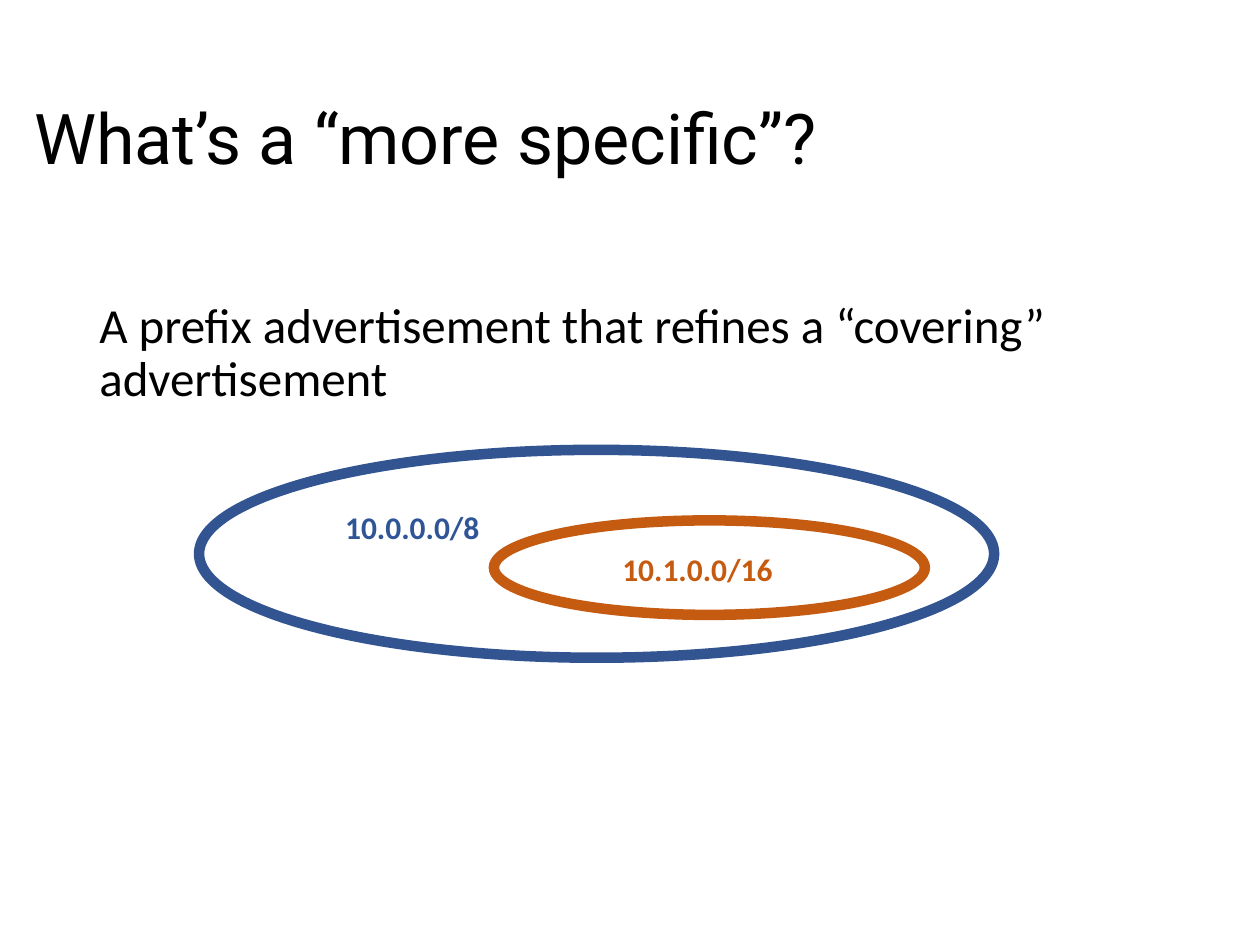
from pptx import Presentation
from pptx.dml.color import RGBColor
from pptx.enum import shapes, text
from pptx.util import Inches, Pt

COLORS = {
    "text": "000000",
    "background": "FFFFFF",
    "covering_line": "325491",
    "covering_label": "2F5597",
    "specific": "C55A11",
}


def color(name):
    return RGBColor.from_string(COLORS[name])


def inches(box):
    return [Inches(length) for length in box]


def write(paragraph, wording, font_name, size, color_name, bold=False):
    paragraph.text = wording
    paragraph.alignment = text.PP_ALIGN.LEFT
    font = paragraph.font
    font.name = font_name
    font.size = Pt(size)
    font.bold = bold
    font.color.rgb = color(color_name)


def place_title(slide, box, wording):
    title = slide.shapes.title
    title.left, title.top, title.width, title.height = inches(box)
    frame = title.text_frame
    frame.vertical_anchor = text.MSO_ANCHOR.MIDDLE
    paragraph = frame.paragraphs[0]
    write(paragraph, wording, "Roboto", 40, "text")
    paragraph.line_spacing = 0.9


def add_definition(slide, box, wording):
    frame = slide.shapes.add_textbox(*inches(box)).text_frame
    frame.word_wrap = True
    paragraph = frame.paragraphs[0]
    write(paragraph, wording, "Calibri", 28, "text")
    paragraph.line_spacing = 0.9
    paragraph.space_before = Pt(10)


def add_prefix(slide, box, line_color, label_box, label, label_color):
    ellipse = slide.shapes.add_shape(shapes.MSO_SHAPE.OVAL, *inches(box))
    ellipse.shadow.inherit = False
    ellipse.fill.solid()
    ellipse.fill.fore_color.rgb = color("background")
    ellipse.line.color.rgb = color(line_color)
    ellipse.line.width = Pt(6)

    left, top, width, height = box
    dx, dy, label_width, label_height = label_box
    frame = slide.shapes.add_textbox(
        *inches((left + dx, top + dy, label_width, label_height))
    ).text_frame
    frame.word_wrap = False
    frame.auto_size = text.MSO_AUTO_SIZE.SHAPE_TO_FIT_TEXT
    write(frame.paragraphs[0], label, "Calibri", 18, label_color, bold=True)


def main():
    presentation = Presentation()
    presentation.slide_width = Inches(10)
    presentation.slide_height = Inches(7.5)
    slide = presentation.slides.add_slide(presentation.slide_layouts[5])

    place_title(slide, (0.17, 0.4, 9.72, 1.45), "What’s a “more specific”?")
    add_definition(
        slide,
        (0.69, 2.34, 8.62, 4.76),
        "A prefix advertisement that refines a “covering” advertisement",
    )
    add_prefix(slide, (1.58, 3.57, 6.31, 1.65), "covering_line",
               (1.06, 0.41, 1.28, 0.4), "10.0.0.0/8", "covering_label")
    add_prefix(slide, (3.92, 4.13, 3.42, 0.75), "specific",
               (0.92, 0.19, 1.41, 0.4), "10.1.0.0/16", "specific")

    presentation.save("out.pptx")


if __name__ == "__main__":
    main()
